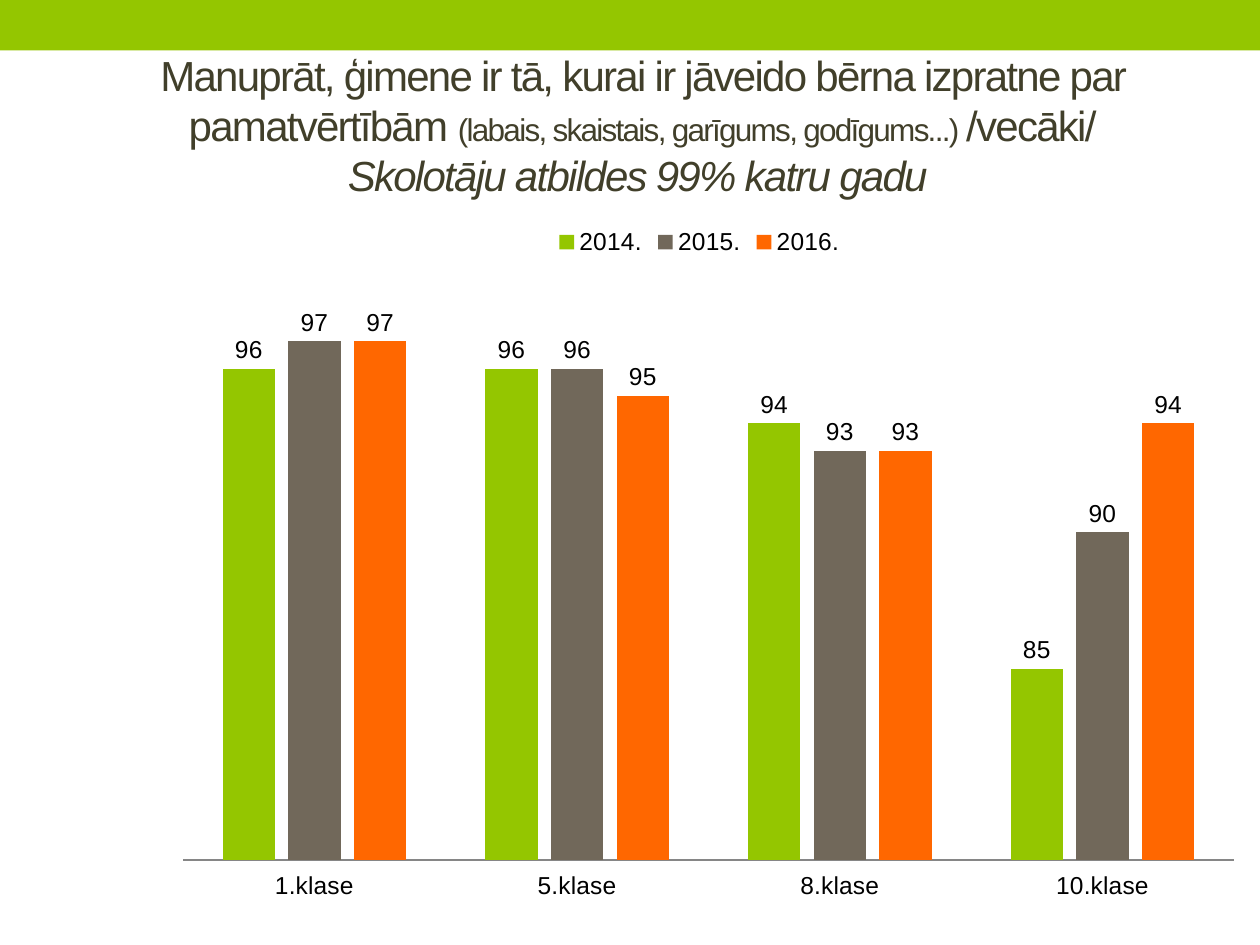
from lxml import etree
from pptx import Presentation
from pptx.chart.data import CategoryChartData
from pptx.dml.color import RGBColor
from pptx.enum.chart import XL_CHART_TYPE, XL_LABEL_POSITION, XL_LEGEND_POSITION, XL_TICK_LABEL_POSITION, XL_TICK_MARK
from pptx.enum.shapes import MSO_SHAPE
from pptx.enum.text import MSO_ANCHOR, MSO_AUTO_SIZE, PP_ALIGN
from pptx.oxml import parse_xml
from pptx.oxml.ns import nsdecls
from pptx.util import Inches, Pt

GREEN = "94C600"


def paint(color_format, hex_color):
    color_format.rgb = RGBColor.from_string(hex_color)


prs = Presentation()
prs.slide_width, prs.slide_height = Inches(10), Inches(7.5)
slide = prs.slides.add_slide(prs.slide_layouts[5])

# Top band
band = slide.shapes.add_shape(MSO_SHAPE.RECTANGLE, 0, 0, Inches(10), Inches(0.4))
band.shadow.inherit = False
band.fill.solid()
paint(band.fill.fore_color, GREEN)
band.line.fill.background()

# Question
title = slide.shapes.title
title.left, title.top = Inches(0.2), Inches(0.36)
title.width, title.height = Inches(9.8), Inches(1.26)
title.text_frame.word_wrap = True
title.text_frame.auto_size = MSO_AUTO_SIZE.NONE
title.text_frame.vertical_anchor = MSO_ANCHOR.MIDDLE
question = title.text_frame.paragraphs[0]
question.alignment = PP_ALIGN.CENTER
question.font.name = "Arial"
question.font.size = Pt(24)
paint(question.font.color, "413F2A")
for words, size, italic in [
    ("Manuprāt, ģimene ir tā, kurai ir jāveido bērna izpratne par pamatvērtībām ", 24, False),
    ("(labais, skaistais, garīgums, godīgums...) ", 18, False),
    ("/vecāki/", 24, False),
    ("Skolotāju atbildes 99% katru gadu ", 24, True),
]:
    if italic:
        question.add_line_break()
    run = question.add_run()
    run.text = words
    run.font.size = Pt(size)
    run.font.italic = italic
    run.font._element.set("spc", "-100")

# Answers by class and year
answers = CategoryChartData(number_format="0")
answers.categories = ["1.klase", "5.klase", "8.klase", "10.klase"]
years = [
    ("2014.", GREEN, (96, 96, 94, 85)),
    ("2015.", "71685A", (97, 96, 93, 90)),
    ("2016.", "FF6700", (97, 95, 93, 94)),
]
for year, _, values in years:
    answers.add_series(year, values)
chart = slide.shapes.add_chart(
    XL_CHART_TYPE.COLUMN_CLUSTERED,
    Inches(1.22), Inches(1.7), Inches(8.66), Inches(5.67), answers,
).chart
chart.has_title = False
chart.font.name = "Arial"
chart.font.size = Pt(14)
paint(chart.font.color, "000000")
chart.has_legend = True
chart.legend.position = XL_LEGEND_POSITION.TOP
chart.legend.include_in_layout = False

chart.value_axis.minimum_scale = 78
chart.value_axis.maximum_scale = 98
chart.value_axis.has_major_gridlines = False
chart.value_axis.visible = False
classes = chart.category_axis
classes.major_tick_mark = XL_TICK_MARK.NONE
classes.tick_label_position = XL_TICK_LABEL_POSITION.LOW
classes.format.line.width = Pt(0.75)
paint(classes.format.line.color, "868686")

columns = chart.plots[0]
columns.gap_width = 150
columns.overlap = -25
columns.vary_by_categories = False
for series, (_, color, _) in zip(columns.series, years):
    series.format.fill.solid()
    paint(series.format.fill.fore_color, color)
    labels = series.data_labels
    labels.show_value = True
    labels.position = XL_LABEL_POSITION.OUTSIDE_END
    labels.font.size = Pt(14)

# Fixed inner plot area, as fractions of the chart
plot_area = chart._chartSpace.chart.plotArea
for old_layout in plot_area.findall("{*}layout"):
    plot_area.remove(old_layout)
layout = parse_xml(f"<c:layout {nsdecls('c')}><c:manualLayout/></c:layout>")
for tag, value in [
    ("layoutTarget", "inner"), ("xMode", "edge"), ("yMode", "edge"),
    ("x", "0.027"), ("y", "0.14"), ("w", "0.963"), ("h", "0.764"),
]:
    etree.SubElement(layout[0], f"{{{layout.nsmap['c']}}}{tag}").set("val", value)
plot_area.insert(0, layout)

prs.save("out.pptx")
